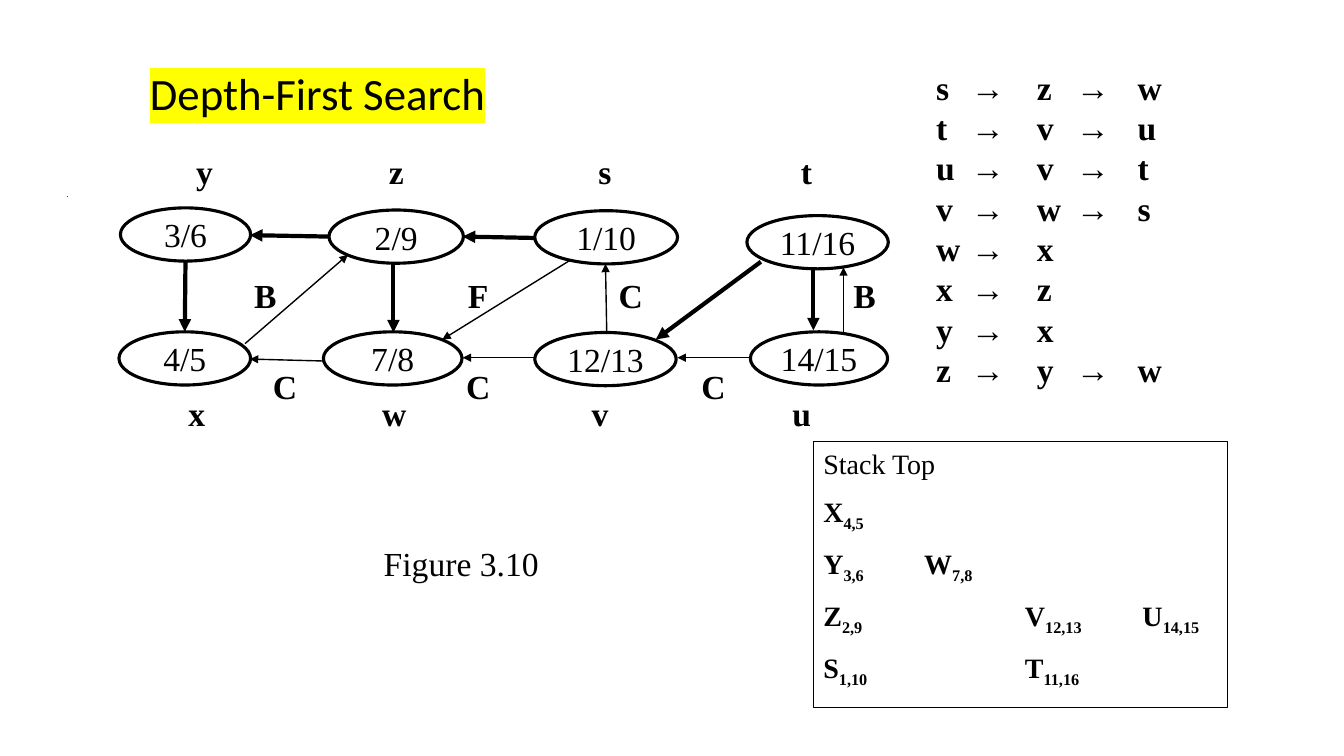
"""Build the depth-first search slide with its graph, adjacency list and stack."""
from lxml import etree
from pptx import Presentation
from pptx.dml.color import RGBColor
from pptx.enum.shapes import MSO_CONNECTOR, MSO_SHAPE
from pptx.enum.text import MSO_ANCHOR, PP_ALIGN
from pptx.oxml.ns import qn
from pptx.util import Pt

BLACK = RGBColor(0, 0, 0)
WHITE = RGBColor(255, 255, 255)
YELLOW = RGBColor(255, 255, 0)
SERIF = "Times New Roman"
OVAL = MSO_SHAPE.OVAL
RECTANGLE = MSO_SHAPE.RECTANGLE
STRAIGHT = MSO_CONNECTOR.STRAIGHT
MIDDLE = MSO_ANCHOR.MIDDLE
TOP = MSO_ANCHOR.TOP
CENTER = PP_ALIGN.CENTER
LEFT = PP_ALIGN.LEFT

THICK, THIN = 3, 1
EDGES = [
    (234.5, 169, 178.5, 168, THICK),
    (175, 245.5, 248.5, 182, THIN),
    (383, 170, 330.5, 169, THICK),
    (420, 178, 316, 242.5, THIN),
    (235.5, 258, 178.5, 256.5, THIN),
    (382, 255.5, 330.5, 255.5, THIN),
    (433.5, 242, 432.5, 188.5, THIN),
    (543.5, 187, 468.5, 242.5, THICK),
    (581, 178.5, 581, 236, THICK),
    (602.5, 249, 602.5, 191, THIN),
    (535.5, 255.5, 484, 255.5, THIN),
    (132.5, 186.5, 132, 237, THICK),
    (281, 185, 281, 237.5, THICK),
]
VERTICES = [
    ("3/6", 86, 148.5, 93),
    ("2/9", 235, 150, 96),
    ("1/10", 382, 150.5, 102),
    ("11/16", 533.5, 154, 101),
    ("4/5", 85, 237, 94),
    ("7/8", 231, 237, 99),
    ("12/13", 382, 237.5, 101),
    ("14/15", 536, 237, 98),
]
VERTEX_HEIGHT = 38
LABEL_ROWS = [
    ("yzst", 61, 104.5, (78, 215, 364, 508)),
    ("xwvu", 55.5, 277, (78, 219, 366, 510)),
    ("BFCB", 99.5, 193, (83, 235, 344, 511)),
    ("CCC", 116.5, 257.5, (80, 218, 386)),
]
ADJACENCY = ["szw", "tvu", "uvt", "vws", "wx", "xz", "yx", "zyw"]
STACK_ROWS = [
    "X|4,5",
    "Y|3,6|\tW|7,8",
    "Z|2,9|\t\tV|12,13|\tU|14,15",
    "S|1,10|\t\tT|11,16",
]


def add_text(frame, text, size=24, font=SERIF, bold=False, align=LEFT,
             space_after=0, line_spacing=None, tabs=(), tab_align="l",
             highlight=None):
    """Add one paragraph; every second part between bars is a subscript."""
    paragraph = frame.paragraphs[-1]
    if paragraph.runs:
        paragraph = frame.add_paragraph()
    paragraph.alignment = align
    paragraph.space_after = Pt(space_after)
    paragraph.line_spacing = line_spacing
    if tabs:
        stops = etree.SubElement(paragraph._p.get_or_add_pPr(), qn("a:tabLst"))
        for stop in tabs:
            etree.SubElement(stops, qn("a:tab"), pos=str(Pt(stop)), algn=tab_align)
    for index, part in enumerate(text.split("|")):
        run = paragraph.add_run()
        run.text = part
        run.font.size = Pt(size)
        run.font.name = font
        run.font.bold = bold
        run.font.color.rgb = BLACK
        properties = run._r.get_or_add_rPr()
        if index % 2:
            properties.set("baseline", "-25000")
        if highlight is not None:
            marker = etree.Element(qn("a:highlight"))
            etree.SubElement(marker, qn("a:srgbClr"), val=str(highlight))
            properties.find(qn("a:solidFill")).addnext(marker)


def add_box(slide, left, top, width, height, anchor=TOP, wrap=True):
    """Add an empty text box and return its text frame."""
    box = slide.shapes.add_textbox(Pt(left), Pt(top), Pt(width), Pt(height))
    frame = box.text_frame
    frame.word_wrap = wrap
    frame.vertical_anchor = anchor
    return frame


def add_outline(slide, kind, left, top, width, height, weight, fill=WHITE, anchor=MIDDLE):
    """Add a filled shape with a black outline and return its text frame."""
    shape = slide.shapes.add_shape(kind, Pt(left), Pt(top), Pt(width), Pt(height))
    shape.shadow.inherit = False
    shape.fill.solid()
    shape.fill.fore_color.rgb = fill
    shape.line.color.rgb = BLACK
    shape.line.width = Pt(weight)
    shape.text_frame.vertical_anchor = anchor
    return shape.text_frame


def add_edge(slide, x1, y1, x2, y2, weight):
    """Add an arrow that points to its second end."""
    edge = slide.shapes.add_connector(STRAIGHT, Pt(x1), Pt(y1), Pt(x2), Pt(y2))
    edge.line.color.rgb = BLACK
    edge.line.width = Pt(weight)
    properties = edge.element.spPr
    etree.SubElement(properties.find(qn("a:ln")), qn("a:tailEnd"), type="triangle")
    etree.SubElement(properties, qn("a:effectLst"))


def add_graph(slide):
    """Draw the edges, the vertices and their letters."""
    for edge in EDGES:
        add_edge(slide, *edge)
    for times, left, top, width in VERTICES:
        frame = add_outline(slide, OVAL, left, top, width, VERTEX_HEIGHT, 2.25)
        frame.word_wrap = False
        add_text(frame, times, align=CENTER)
    for letters, left, top, stops in LABEL_ROWS:
        frame = add_box(slide, left, top, 565, 36, anchor=MIDDLE)
        add_text(frame, "\t" + "\t".join(letters), bold=True,
                 tabs=stops, tab_align="ctr")


def add_adjacency(slide):
    """List the neighbours of each vertex."""
    frame = add_box(slide, 661.5, 44, 209.5, 240)
    for chain in ADJACENCY:
        add_text(frame, "\t→\t".join(chain), bold=True, tabs=(25, 72, 100, 144))


def add_stack(slide):
    """Draw the stack panel."""
    frame = add_outline(slide, RECTANGLE, 581, 315.5, 295.5, 189.5, 0.5, anchor=TOP)
    add_text(frame, "Stack Top", size=20, space_after=10)
    for row in STACK_ROWS:
        add_text(frame, row, size=20, bold=True, space_after=10, tabs=(72, 144, 228))


def main():
    """Assemble the slide and save it."""
    deck = Presentation()
    deck.slide_width, deck.slide_height = Pt(960), Pt(540)
    slide = deck.slides.add_slide(deck.slide_layouts[6])
    add_graph(slide)
    add_outline(slide, RECTANGLE, 48, 140.5, 0, 0, 0.75, fill=BLACK)
    add_adjacency(slide)
    add_stack(slide)
    title = add_box(slide, 100, 24.5, 256.5, 60, wrap=False)
    add_text(title, "Depth-First Search", size=32, font="Calibri",
             line_spacing=1.5, highlight=YELLOW)
    caption = add_box(slide, 267, 384.5, 126, 37.5)
    add_text(caption, "Figure 3.10")
    deck.save("out.pptx")


if __name__ == "__main__":
    main()
